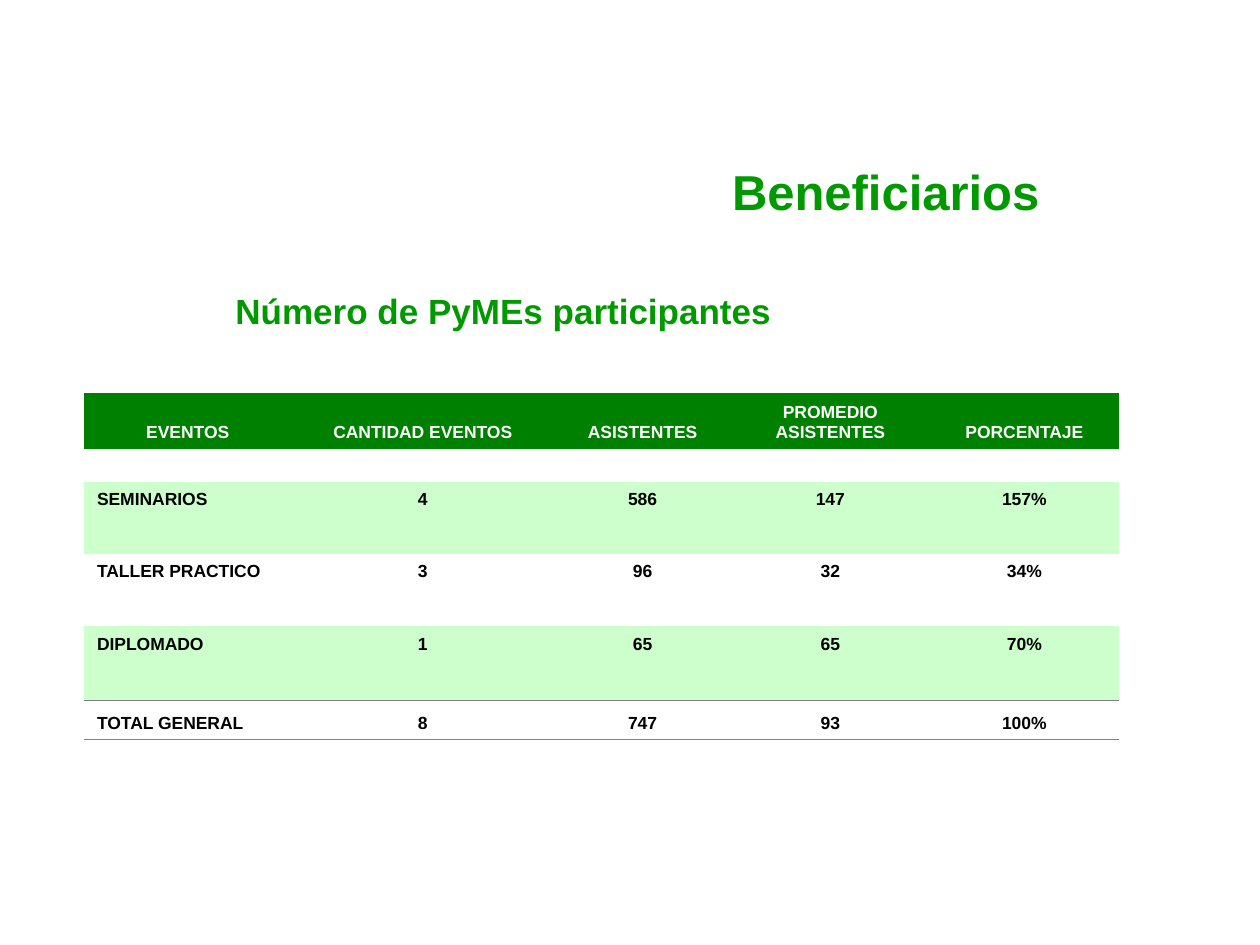
from pptx import Presentation
from pptx.dml.color import RGBColor
from pptx.enum.text import MSO_ANCHOR as Anchor, PP_ALIGN as Align
from pptx.oxml import parse_xml
from pptx.oxml.ns import nsdecls
from pptx.util import Inches, Pt


def write(frame, text, size=10, color="000000", align=Align.LEFT):
    paragraph = frame.paragraphs[0]
    paragraph.alignment = align
    if not text:
        paragraph._p.get_or_add_endParaRPr().set("sz", str(size * 100))
        return
    run = paragraph.add_run()
    run.text = text
    run.font.name = "Arial"
    run.font.size = Pt(size)
    run.font.bold = True
    run.font.color.rgb = RGBColor.from_string(color)


def rule(cell, side):
    cell._tc.get_or_add_tcPr().insert(0, parse_xml(
        f'<a:ln{side} {nsdecls("a")} w="12700"><a:solidFill>'
        f'<a:srgbClr val="808080"/></a:solidFill></a:ln{side}>'))


GREEN, DARK, PALE, WHITE = "009900", "008000", "CCFFCC", "FFFFFF"
rows = [
    (0.44, DARK, ["EVENTOS", "CANTIDAD EVENTOS", "ASISTENTES",
                  "PROMEDIO ASISTENTES", "PORCENTAJE"]),
    (0.26, WHITE, [""] * 5),
    (0.26, PALE, ["SEMINARIOS", "4", "586", "147", "157%"]),
    (0.3, PALE, [""] * 5),
    (0.26, WHITE, ["TALLER PRACTICO", "3", "96", "32", "34%"]),
    (0.31, WHITE, [""] * 5),
    (0.26, PALE, ["DIPLOMADO", "1", "65", "65", "70%"]),
    (0.32, PALE, [""] * 5),
    (0.31, WHITE, ["TOTAL GENERAL", "8", "747", "93", "100%"]),
]
column_widths = [1.64, 2.09, 1.4, 1.58, 1.5]

deck = Presentation()
deck.slide_width, deck.slide_height = Inches(10), Inches(7.5)
slide = deck.slides.add_slide(deck.slide_layouts[5])

heading = slide.shapes.title
heading.left, heading.top = Inches(5.71), Inches(1.23)
heading.width, heading.height = Inches(2.99), Inches(0.57)
heading.text_frame.vertical_anchor = Anchor.TOP
write(heading.text_frame, "Beneficiarios", size=28, color=GREEN)

subtitle = slide.shapes.add_textbox(
    Inches(1.77), Inches(2.25), Inches(8.23), Inches(0.43)).text_frame
subtitle.word_wrap = True
subtitle.vertical_anchor = Anchor.MIDDLE
write(subtitle, "Número de PyMEs participantes", size=20, color=GREEN)

attendance = slide.shapes.add_table(
    len(rows), len(column_widths), Inches(0.67), Inches(3.12),
    Inches(sum(column_widths)), Inches(sum(row[0] for row in rows))).table
attendance._tbl.tblPr.find("{*}tableStyleId").text = "{2D5ABB26-0587-4C30-8999-92F81FD0307C}"
for column, width in zip(attendance.columns, column_widths):
    column.width = Inches(width)

last = len(rows) - 1
for r, (height, fill, texts) in enumerate(rows):
    attendance.rows[r].height = Inches(height)
    for c, text in enumerate(texts):
        cell = attendance.cell(r, c)
        cell.vertical_anchor = Anchor.BOTTOM
        cell.fill.solid()
        cell.fill.fore_color.rgb = RGBColor.from_string(fill)
        write(cell.text_frame, text, color=WHITE if r == 0 else "000000",
              align=Align.LEFT if r and c == 0 else Align.CENTER)
        if r >= last - 1:
            rule(cell, "B")
        if r == last:
            rule(cell, "T")

deck.save("out.pptx")
